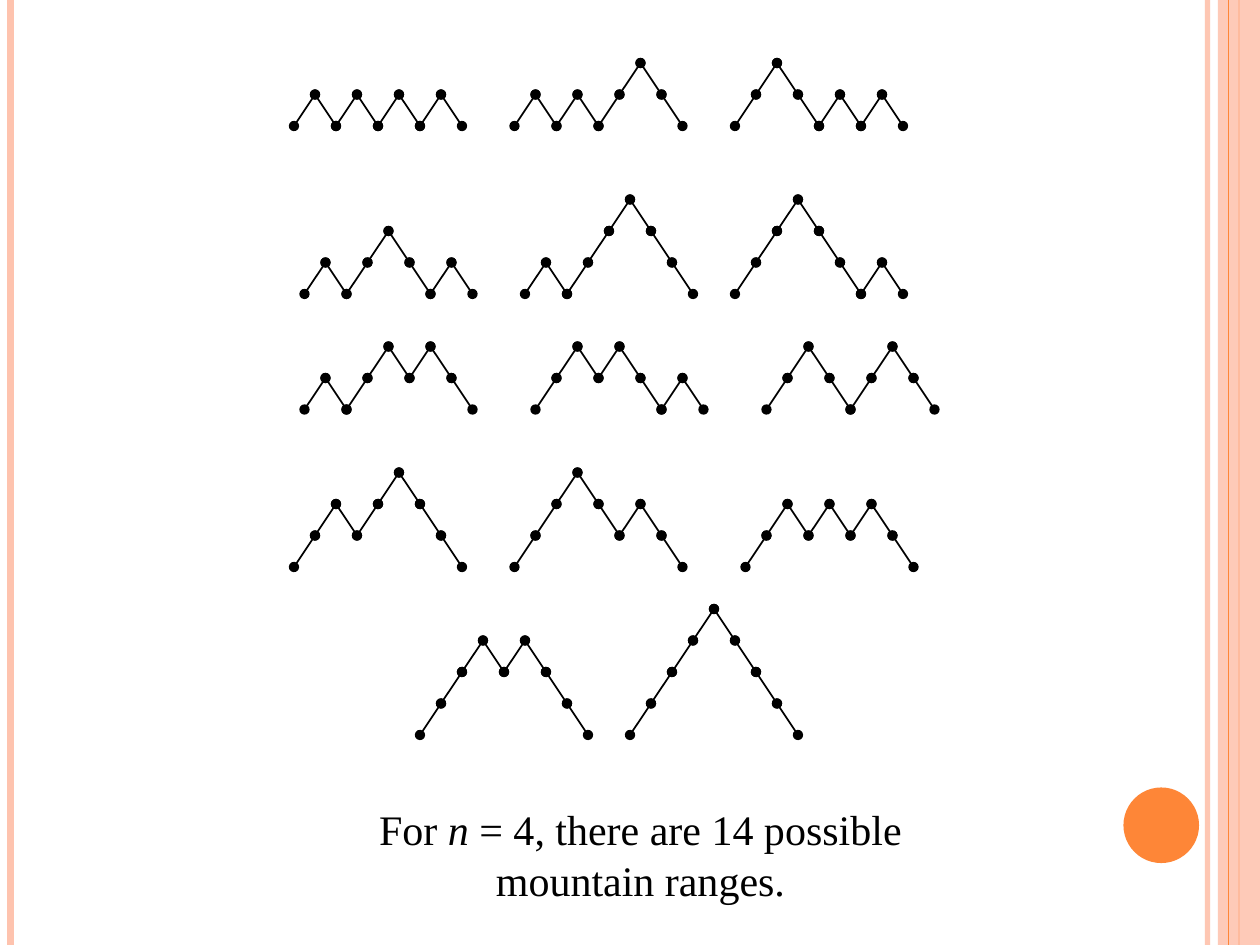
from itertools import accumulate, pairwise

from pptx import Presentation
from pptx.dml.color import RGBColor
from pptx.enum.shapes import MSO_CONNECTOR, MSO_SHAPE
from pptx.enum.text import PP_ALIGN
from pptx.oxml.ns import qn
from pptx.oxml.xmlchemy import OxmlElement
from pptx.util import Inches, Pt

BLACK = RGBColor(0x00, 0x00, 0x00)
ORANGE = RGBColor(0xFE, 0x86, 0x37)
PEACH = RGBColor(0xFE, 0xC3, 0xAE)

presentation = Presentation()
presentation.slide_width = Inches(10)
presentation.slide_height = Inches(7.5)
slide = presentation.slides.add_slide(presentation.slide_layouts[6])

# The slide is a grid of 120 columns by 90 rows of square cells
COLUMNS, ROWS = 120, 90
CELL = presentation.slide_width / COLUMNS


def add_line(start, end, color, width):
    points = [round(value * CELL) for value in (*start, *end)]
    connector = slide.shapes.add_connector(MSO_CONNECTOR.STRAIGHT, *points)
    connector.line.color.rgb = color
    connector.line.width = Pt(width)
    connector._element.spPr.append(OxmlElement("a:effectLst"))
    return connector


def set_opacity(shape, percent):
    alpha = OxmlElement("a:alpha")
    alpha.set("val", str(percent * 1000))
    next(shape._element.spPr.iter(qn("a:srgbClr"))).append(alpha)


# Vertical side stripes: column, colour, width in points
stripes = [
    add_line((column, 0), (column, ROWS), color, width)
    for column, color, width in [(115, PEACH, 3), (1, PEACH, 4.5), (118, ORANGE, 1.5)]
]
set_opacity(stripes[0], 93)

# Translucent band at the right edge, with a thin line on top
band = slide.shapes.add_shape(
    MSO_SHAPE.RECTANGLE,
    round(116 * CELL), 0, round(4 * CELL), presentation.slide_height,
)
band.fill.solid()
band.fill.fore_color.rgb = PEACH
set_opacity(band, 87)
add_line((117, 0), (117, ROWS), ORANGE, 0.75)

# Orange disc
disc = slide.shapes.add_shape(
    MSO_SHAPE.OVAL,
    round(107 * CELL), round(75 * CELL), round(7.2 * CELL), round(7.2 * CELL),
)
disc.fill.solid()
disc.fill.fore_color.rgb = ORANGE
for shape in (band, disc):
    shape.line.fill.background()
    shape.shadow.inherit = False

# Mountain ranges: base row, then start column and strokes (/ up, \ down)
STROKE_COLUMNS, STROKE_ROWS = 2, 3
RANGES = [
    (12, [(28, r"/\/\/\/\ "), (49, r"/\/\//\\"), (70, r"//\\/\/\ ")]),
    (28, [(29, r"/\//\\/\ "), (50, r"/\///\\\ "), (70, r"///\\\/\ ")]),
    (39, [(29, r"/\//\/\\"), (51, r"//\/\\/\ "), (73, r"//\\//\\")]),
    (54, [(28, r"//\//\\\ "), (49, r"///\\/\\"), (71, r"//\/\/\\")]),
    (70, [(40, r"///\/\\\ "), (60, r"////\\\\")]),
]
for base_row, mountains in RANGES:
    for first_column, strokes in mountains:
        steps = [1 if stroke == "/" else -1 for stroke in strokes.strip()]
        heights = accumulate(steps, initial=0)
        points = [
            (first_column + STROKE_COLUMNS * index, base_row - STROKE_ROWS * height)
            for index, height in enumerate(heights)
        ]
        for start, end in pairwise(points):
            connector = add_line(start, end, BLACK, 1)
            outline = connector._element.spPr.get_or_add_ln()
            for tag in ("a:headEnd", "a:tailEnd"):
                dot = OxmlElement(tag)
                dot.set("type", "oval")
                outline.append(dot)

# Caption
caption = slide.shapes.add_textbox(
    round(29 * CELL), round(72 * CELL), round(64 * CELL), round(14.5 * CELL)
)
text_frame = caption.text_frame
text_frame.word_wrap = True
text_frame.margin_top = Inches(0.38)
paragraph = text_frame.paragraphs[0]
paragraph.alignment = PP_ALIGN.CENTER
for text in ("For ", "n", " = 4, there are 14 possible mountain ranges."):
    run = paragraph.add_run()
    run.text = text
    run.font.name = "Times New Roman"
    run.font.size = Pt(24)
    run.font.color.rgb = BLACK
    run.font.italic = text == "n"

presentation.save("out.pptx")
